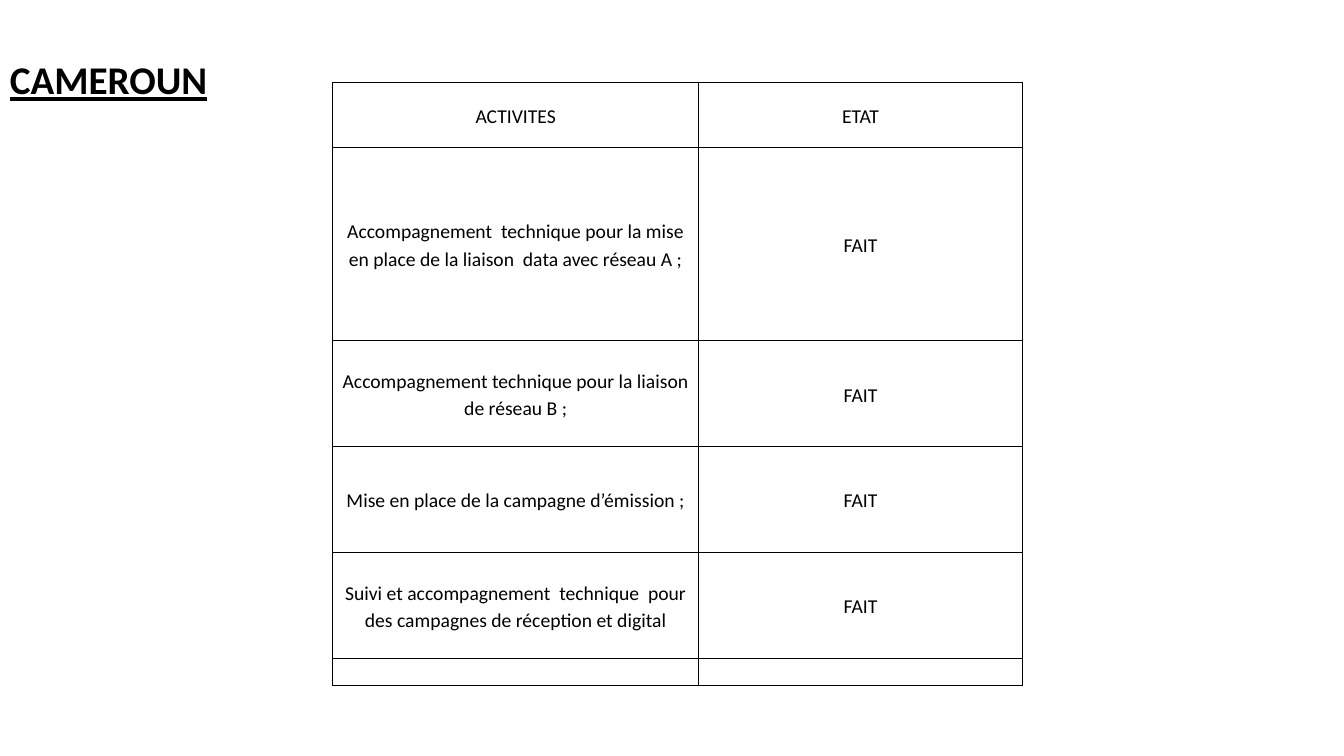
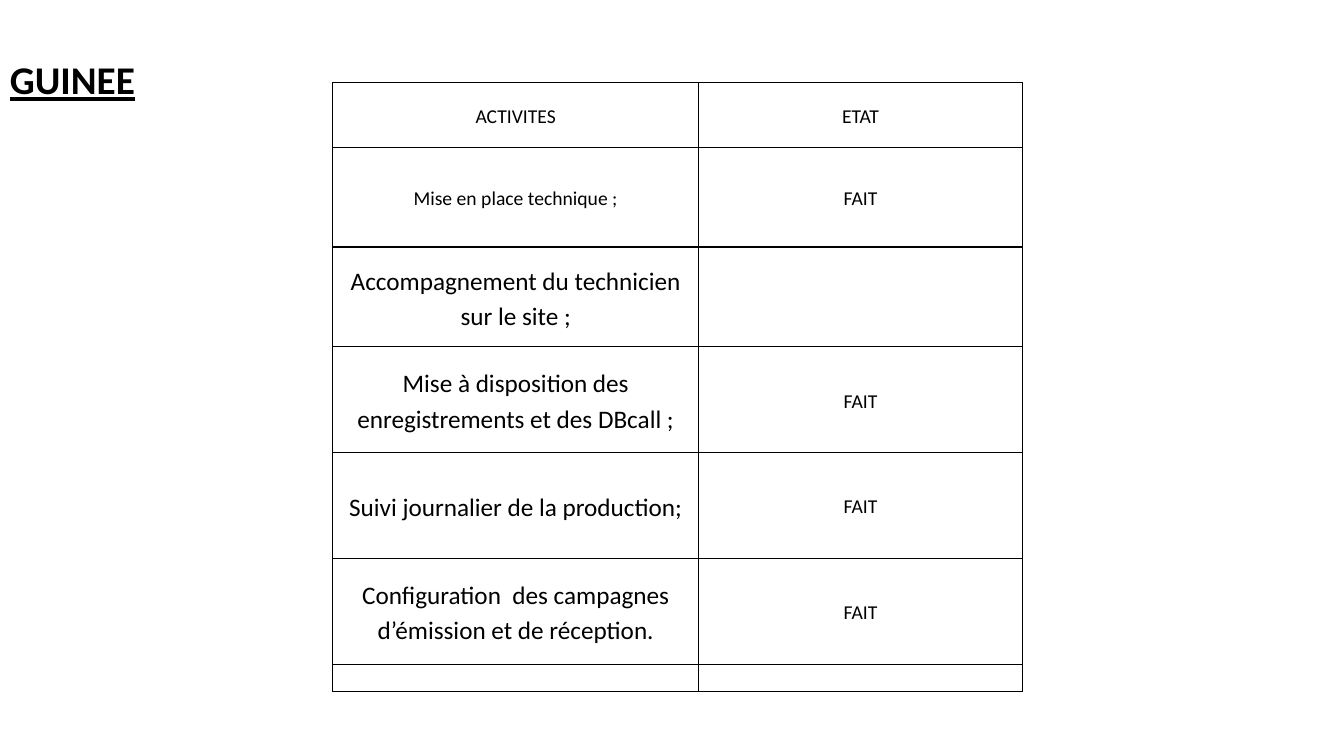
"""Build two slides that list each country's activities and their state."""
from lxml.etree import SubElement as Sub
from pptx import Presentation
from pptx.dml.color import RGBColor as Rgb
from pptx.enum.text import MSO_ANCHOR as Anchor, PP_ALIGN as Align
from pptx.oxml.ns import qn
from pptx.util import Inches, Pt

HUES = {"ink": "000000"}
FONT = "Calibri"
WIDE, HIGH = 13.33, 7.5
LEFT, TOP = 3.3, 0.82
COLS = (3.63, 3.21)
HEAD = ("ACTIVITES", "ETAT")
DONE = "FAIT"
HEAD_ROW, LAST_ROW = 0.64, 0.27
SMALL, LARGE = 14, 18

PAGES = [
    {"title": "CAMEROUN", "pad": 0.03, "rows": [
        ("Accompagnement  technique pour la mise en place de la liaison  data avec réseau A ;", DONE, 1.92, SMALL),
        ("Accompagnement technique pour la liaison de réseau B ;", DONE, 1.05, SMALL),
        ("Mise en place de la campagne d’émission ;", DONE, 1.05, SMALL),
        ("Suivi et accompagnement  technique  pour des campagnes de réception et digital", DONE, 1.05, SMALL),
    ]},
    {"title": "GUINEE", "pad": 0.05, "rows": [
        ("Mise en place technique ;", DONE, 0.99, SMALL),
        ("Accompagnement du technicien sur le site ;", "", 0.99, LARGE),
        ("Mise à disposition des enregistrements et des DBcall ;", DONE, 1.05, LARGE),
        ("Suivi journalier de la production;", DONE, 1.05, LARGE),
        ("Configuration  des campagnes d’émission et de réception.", DONE, 1.05, LARGE),
    ]},
]


def write(frame, text, size=SMALL, bold=False, line=False, align=Align.CENTER, gap=1.15):
    para = frame.paragraphs[0]
    para.alignment, para.line_spacing = align, gap
    if not text:
        Sub(para._p, qn("a:endParaRPr"), sz=str(size * 100))
        return
    run = para.add_run()
    run.text = text
    font = run.font
    font.name, font.size, font.bold, font.underline = FONT, Pt(size), bold, line
    font.color.rgb = Rgb.from_string(HUES["ink"])


def frame_cell(cell, pad):
    cell.margin_left = cell.margin_right = Inches(pad)
    cell.margin_top = cell.margin_bottom = 0
    cell.vertical_anchor = Anchor.MIDDLE
    props = cell._tc.get_or_add_tcPr()
    for side in ("lnL", "lnR", "lnT", "lnB"):
        edge = Sub(props, qn(f"a:{side}"), w=str(Pt(1)))
        Sub(Sub(edge, qn("a:solidFill")), qn("a:srgbClr"), val=HUES["ink"])
    cell.fill.background()


def add_title(slide, text):
    box = slide.shapes.add_textbox(0, Inches(0.42), Inches(2.92), Inches(0.79))
    frame = box.text_frame
    frame.word_wrap, frame.vertical_anchor = True, Anchor.MIDDLE
    write(frame, text, size=28, bold=True, line=True, align=Align.LEFT, gap=0.9)


def add_grid(slide, rows, pad):
    rows = [(*HEAD, HEAD_ROW, SMALL), *rows, ("", "", LAST_ROW, SMALL)]
    high = sum(row[2] for row in rows)
    grid = slide.shapes.add_table(len(rows), len(COLS), Inches(LEFT), Inches(TOP),
                                  Inches(sum(COLS)), Inches(high)).table
    grid.first_row = grid.horz_banding = False
    for col, wide in zip(grid.columns, COLS):
        col.width = Inches(wide)
    for line, (task, state, tall, size) in zip(grid.rows, rows):
        line.height = Inches(tall)
        pairs = ((task, size, pad), (state, SMALL, 0.03))
        for cell, (text, points, inset) in zip(line.cells, pairs):
            frame_cell(cell, inset)
            write(cell.text_frame, text, size=points)


def main():
    deck = Presentation()
    deck.slide_width, deck.slide_height = Inches(WIDE), Inches(HIGH)
    for page in PAGES:
        slide = deck.slides.add_slide(deck.slide_layouts[6])
        add_title(slide, page["title"])
        add_grid(slide, page["rows"], page["pad"])
    deck.save("out.pptx")


if __name__ == "__main__":
    main()
